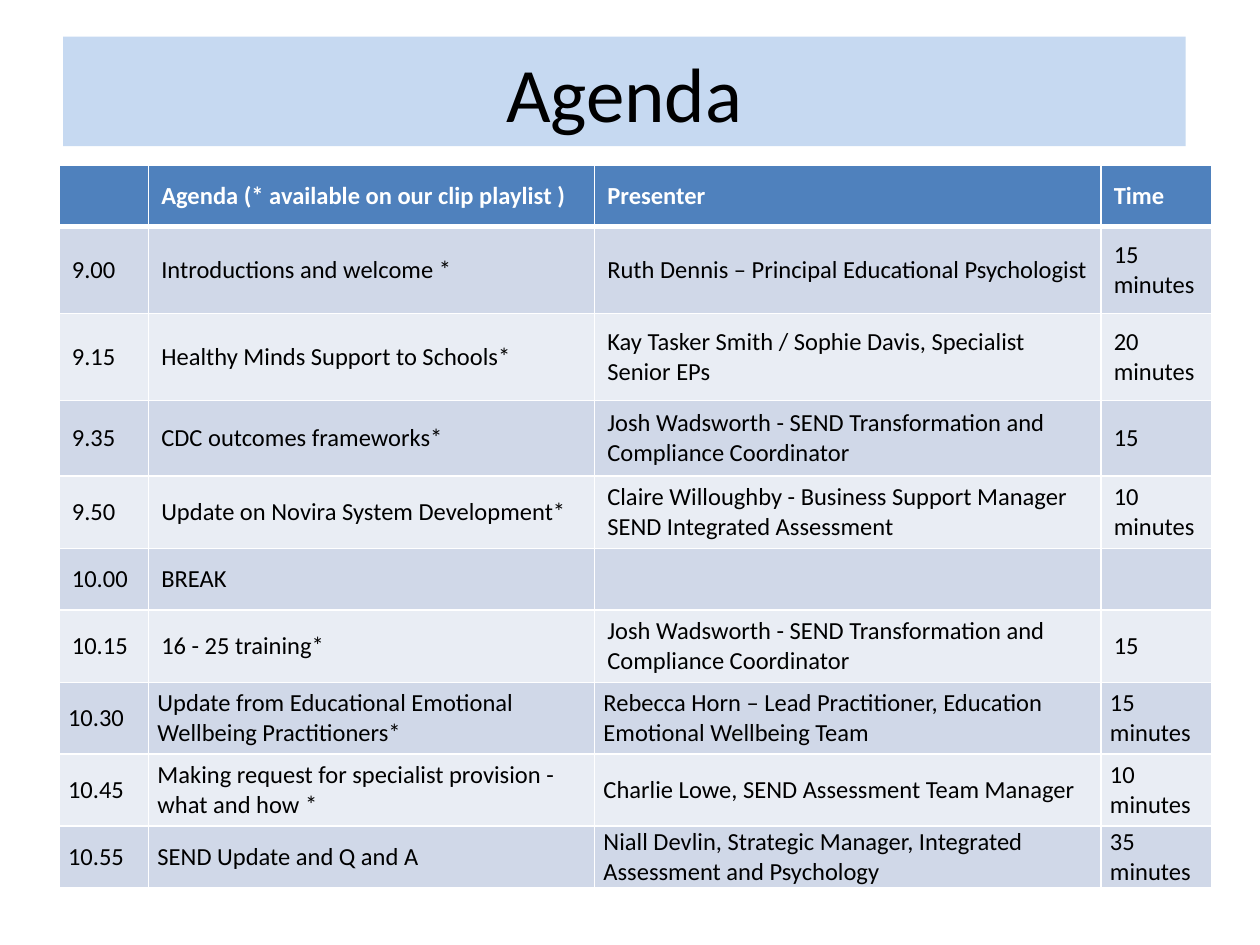
from lxml import etree
from pptx import Presentation
from pptx.dml.color import RGBColor
from pptx.enum import text as t
from pptx.oxml import ns
from pptx.util import Inches, Pt

COLORS = {"banner": "C6D9F1", "header": "4F81BD", "odd": "D0D8E8",
          "even": "E9EDF4", "white": "FFFFFF", "black": "000000"}
COLUMNS = [0.71, 3.54, 4.02, 0.88]
HEIGHTS = [0.49, 0.69, 0.69, 0.6, 0.57, 0.49, 0.57, 0.57, 0.57, 0.49]
COORDINATOR = "Josh Wadsworth - SEND Transformation and Compliance Coordinator"
ROWS = [
    ("", "Agenda (* available on our clip playlist )", "Presenter", "Time"),
    ("9.00", "Introductions and welcome *",
     "Ruth Dennis – Principal Educational Psychologist", "15 minutes"),
    ("9.15", "Healthy Minds Support to Schools*",
     "Kay Tasker Smith / Sophie Davis, Specialist Senior EPs", "20 minutes"),
    ("9.35", "CDC outcomes frameworks*", COORDINATOR, "15"),
    ("9.50", "Update on Novira System Development*",
     "Claire Willoughby - Business Support Manager\nSEND Integrated Assessment",
     "10 minutes"),
    ("10.00", "BREAK", "", ""),
    ("10.15", "16 - 25 training*", COORDINATOR, "15"),
    ("10.30", "Update from Educational Emotional Wellbeing Practitioners*",
     "Rebecca Horn – Lead Practitioner, Education Emotional Wellbeing Team",
     "15 minutes"),
    ("10.45", "Making request for specialist provision - what and how *",
     "Charlie Lowe, SEND Assessment Team Manager", "10 minutes"),
    ("10.55", "SEND Update and Q and A",
     "Niall Devlin, Strategic Manager, Integrated Assessment and Psychology",
     "35 minutes"),
]
FIRST_TIGHT_ROW = 7


def write(tf, text, size=14, color="black", bold=False, align=t.PP_ALIGN.LEFT):
    tf.text = text
    for p in tf.paragraphs:
        p.alignment = align
        p.font.size = Pt(size)
        for r in p.runs:
            r.font.name = "Calibri"
            r.font.size = Pt(size)
            r.font.bold = bold
            r.font.color.rgb = RGBColor.from_string(COLORS[color])


def add_borders(cell, **widths):
    """Draw white cell borders; widths maps L, R, T and B to points, in that order."""
    tc_pr = cell._tc.get_or_add_tcPr()
    for side, width in widths.items():
        ln = etree.SubElement(tc_pr, ns.qn(f"a:ln{side}"), w=str(Pt(width)))
        fill = etree.SubElement(ln, ns.qn("a:solidFill"))
        etree.SubElement(fill, ns.qn("a:srgbClr"), val=COLORS["white"])


prs = Presentation()
prs.slide_width, prs.slide_height = Inches(10), Inches(7.5)
s = prs.slides.add_slide(prs.slide_layouts[5])

title = s.shapes.title
title.left, title.top = Inches(0.5), Inches(0.29)
title.width, title.height = Inches(8.91), Inches(0.87)
title.fill.solid()
title.fill.fore_color.rgb = RGBColor.from_string(COLORS["banner"])
title.text_frame.vertical_anchor = t.MSO_ANCHOR.MIDDLE
write(title.text_frame, "Agenda", size=44, align=t.PP_ALIGN.CENTER)

table = s.shapes.add_table(len(ROWS), len(COLUMNS), Inches(0.47), Inches(1.31),
                           Inches(sum(COLUMNS)), Inches(sum(HEIGHTS))).table
for column, width in zip(table.columns, COLUMNS):
    column.width = Inches(width)

for i, (height, row) in enumerate(zip(HEIGHTS, ROWS)):
    table.rows[i].height = Inches(height)
    header = i == 0
    fill = "header" if header else "odd" if i % 2 else "even"
    for j, text in enumerate(row):
        cell = table.cell(i, j)
        cell.vertical_anchor = t.MSO_ANCHOR.MIDDLE
        if i >= FIRST_TIGHT_ROW:
            cell.margin_left = cell.margin_right = Inches(0.07)
            cell.margin_top = cell.margin_bottom = 0
        add_borders(cell, L=1, R=1, T=3 if i == 1 else 1, B=3 if header else 1)
        cell.fill.solid()
        cell.fill.fore_color.rgb = RGBColor.from_string(COLORS[fill])
        write(cell.text_frame, text, color="white" if header else "black", bold=header)

prs.save("out.pptx")
